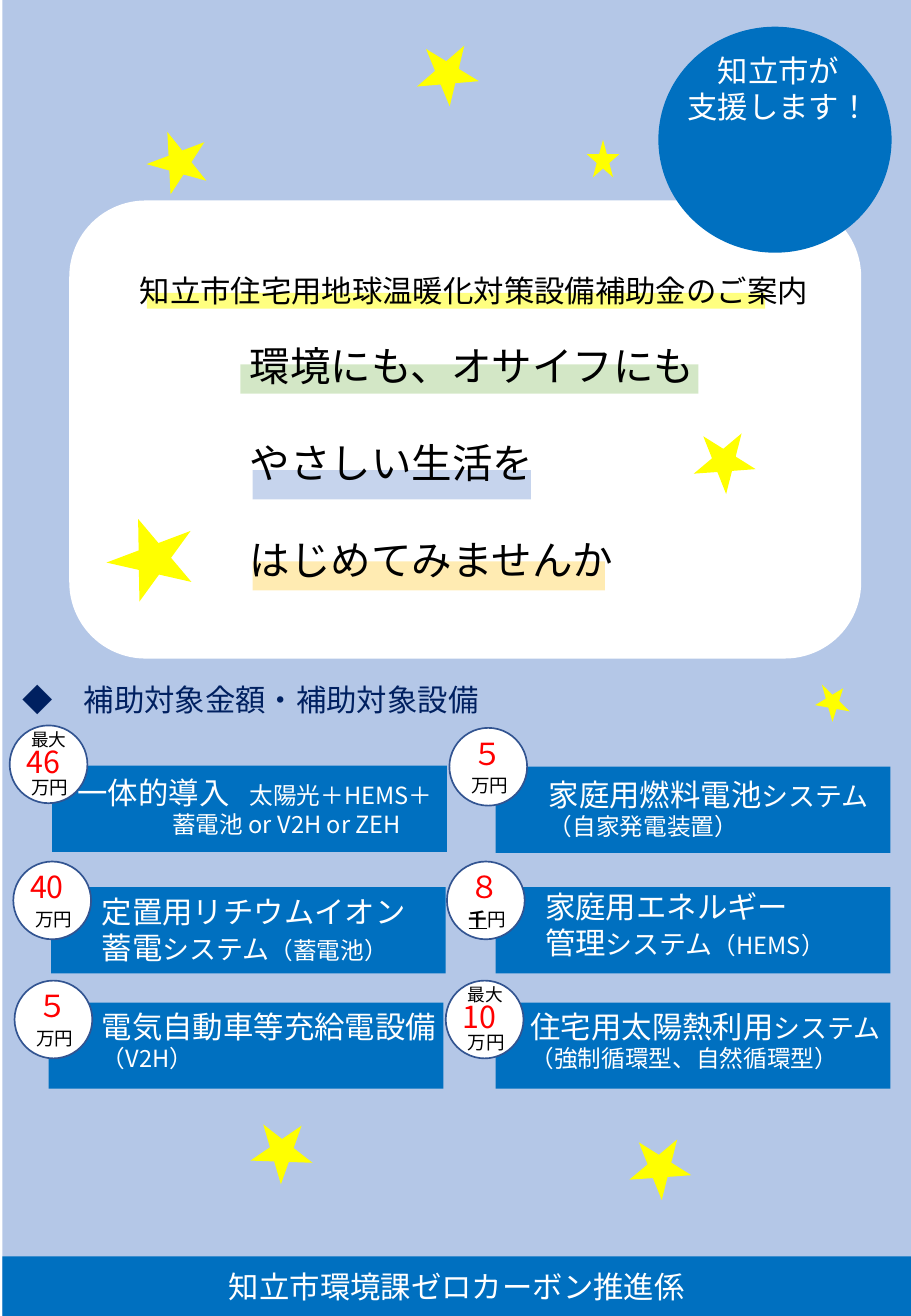
from collections import namedtuple

from lxml import etree
from pptx import Presentation
from pptx.dml.color import RGBColor
from pptx.enum.lang import MSO_LANGUAGE_ID as Language
from pptx.enum.shapes import MSO_SHAPE as Shape
from pptx.enum.text import MSO_ANCHOR as Anchor, MSO_AUTO_SIZE as AutoSize, PP_ALIGN as Align
from pptx.oxml.ns import qn
from pptx.util import Pt

PX = 9144  # 100 px to the inch
WIDTH, HEIGHT = 750, 1083
GOTHIC = "Noto Sans CJK JP"
LINE_HEIGHT = 1.19
COLORS = {
    "sky": "B4C7E7", "white": "FFFFFF", "black": "000000", "blue": "0070C0",
    "navy": "002060", "outline": "325491", "red": "FF0000", "yellow": "FFFF00",
    "green": "A9D18E", "periwinkle": "8FAADC", "amber": "FFD966",
}
Box = namedtuple("Box", "left top width height")
# text_area is x and y within the bar, and the width
Card = namedtuple("Card", "bar text_area lines indent badge limit amount unit")

STARS = [
    (Box(121, 107, 51, 49), 339.2), (Box(483, 115, 27, 31), 0),
    (Box(344, 34, 51, 49), 31.3), (Box(572, 353, 51, 49), 32.1),
    (Box(88, 425, 74, 64), 339.4), (Box(671, 561, 27, 31), 329),
    (Box(205, 921, 51, 49), 325.7), (Box(519, 934, 51, 49), 32.1),
]
MAN_YEN = [("万円", 11)]
CARDS = [
    Card((43, 630), (11, 2, 365),
         [[("一体的導入", 18), ("　", 12), ("太陽光＋HEMS＋", 14)],
          [("蓄電池 or V2H or ZEH", 14)]],
         78, (8, 597), "最大", "46", MAN_YEN),
    Card((408, 631), (34, 3, 298),
         [[("家庭用燃料電池", 18), ("システム", 16)], [("（自家発電装置）", 14)]],
         0, (370, 599), "", "５", MAN_YEN),
    Card((42, 730), (32, 0, 273),
         [[("定置用リチウムイオン", 18)],
          [("蓄電", 18), ("システム", 16), ("（蓄電池）", 14)]],
         0, (11, 709), "", "40", MAN_YEN),
    Card((408, 730), (31, -4, 262),
         [[("家庭用エネルギー", 18)],
          [("管理", 18), ("システム", 16), ("（HEMS）", 14)]],
         0, (368, 709), "", "８", [("千", 11), ("円", 11)]),
    Card((40, 825), (34, 0, 303),
         [[("電気自動車等充給電設備", 18)], [("（V2H）", 14)]],
         0, (12, 807), "", "５", MAN_YEN),
    Card((408, 825), (19, 0, 323),
         [[("住宅用太陽熱利用", 18), ("システム", 16)],
          [("（強制循環型、自然循環型）", 14)]],
         0, (367, 807), "最大", "10", MAN_YEN),
]


def rgb(name):
    return RGBColor.from_string(COLORS[name])


def emu(box):
    return [length * PX for length in box]


def add_figure(slide, kind, box, color, line=None, alpha=None):
    shape = slide.shapes.add_shape(kind, *emu(box))
    shape.shadow.inherit = False
    shape.fill.solid()
    shape.fill.fore_color.rgb = rgb(color)
    if alpha:
        fill = shape.element.spPr.find(qn("a:solidFill"))
        etree.SubElement(fill[0], qn("a:alpha"), val=str(alpha * 1000))
    if line:
        shape.line.color.rgb = rgb(line)
        shape.line.width = Pt(1)
    else:
        shape.line.fill.background()
    return shape


def write(shape, lines, color, font=GOTHIC, align=Align.LEFT, gap=0, wrap=False, anchor=Anchor.TOP):
    """Fill a shape with paragraphs, each a list of (text, size) runs."""
    frame = shape.text_frame
    frame.word_wrap = wrap
    frame.auto_size = AutoSize.NONE if wrap else AutoSize.SHAPE_TO_FIT_TEXT
    frame.vertical_anchor = anchor
    for index, line in enumerate(lines):
        paragraph = frame.add_paragraph() if index else frame.paragraphs[0]
        paragraph.alignment = align
        paragraph.space_before = Pt(gap if index else 0)
        paragraph.line_spacing = Pt(max(size for _, size in line) * LINE_HEIGHT)
        for text, size in line:
            run = paragraph.add_run()
            run.text = text
            run.font.size = Pt(size)
            run.font.color.rgb = rgb(color)
            run.font.name = font
            run.font.language_id = Language.JAPANESE
            latin = run.font._element.find(qn("a:latin"))
            latin.addnext(latin.makeelement(qn("a:ea"), {"typeface": GOTHIC}))
    return frame


def add_label(slide, box, lines, color, **style):
    return write(slide.shapes.add_textbox(*emu(box)), lines, color, **style)


def add_message_panel(slide, box):
    """White panel with the title and three highlighted headline lines."""
    left, top = box.left, box.top
    add_figure(slide, Shape.ROUNDED_RECTANGLE, box, "white")
    marker = add_figure(slide, Shape.RECTANGLE, Box(left + 64, top + 76, 509, 13), "yellow", alpha=50)
    title = slide.shapes.title
    marker.element.addnext(title.element)
    title.left, title.top, title.width, title.height = emu(Box(left + 48, top + 54, 576, 40))
    write(title, [[("知立市住宅用地球温暖化対策設備補助金のご案内", 18)]], "black")
    highlights = [(141, 135, 377, "green"), (151, 222, 229, "periwinkle"), (151, 297, 290, "amber")]
    for x, y, width, color in highlights:
        add_figure(slide, Shape.RECTANGLE, Box(left + x, top + y, width, 24), color, alpha=50)
    headline = ["環境にも、オサイフにも", "やさしい生活を", "はじめてみませんか"]
    add_label(slide, Box(left + 139, top + 111, 390, 212),
              [[(text, 24)] for text in headline], "black", gap=29)


def add_support_circle(slide, box):
    add_figure(slide, Shape.OVAL, box, "blue")
    add_label(slide, Box(box.left + 13, box.top + 16, 172, 71),
              [[("知立市が", 18)], [("支援します！", 18)]],
              "white", font="Calibri", align=Align.CENTER)


def add_badge(slide, box, card):
    """Round badge with the amount, its unit and an upper-limit label if any."""
    left, top = box.left, box.top
    add_figure(slide, Shape.OVAL, box, "white", line="outline")
    drop = 4 if card.limit else 0
    unit = add_label(slide, Box(left + 8, top + 33 + drop, 51, 29), [card.unit], "black")
    if len(card.unit) > 1:
        thousand = unit.paragraphs[0].runs[0]
        thousand.font.bold = True
        thousand.font.underline = True
    x, width = (9, 45) if len(card.amount) == 1 else (4, 58)
    y = 10 if card.limit else 1
    add_label(slide, Box(left + x, top + y, width, 40), [[(card.amount, 18)]], "red")
    if card.limit:
        add_label(slide, Box(left + 8, top - 2, 51, 29), [[(card.limit, 10.5)]], "black")


def add_card(slide, box, card):
    add_figure(slide, Shape.RECTANGLE, box, "blue")
    x, y, width = card.text_area
    frame = add_label(slide, Box(box.left + x, box.top + y, width, 64), card.lines, "white")
    if card.indent:
        properties = frame.paragraphs[-1]._p.get_or_add_pPr()
        properties.set("marL", str(card.indent * PX))
    add_badge(slide, Box(*card.badge, 64, 64), card)


def add_footer(slide, box):
    bar = add_figure(slide, Shape.RECTANGLE, box, "blue")
    write(bar, [[("知立市環境課ゼロカーボン推進係", 18)]], "white", font="Calibri",
          align=Align.CENTER, wrap=True, anchor=Anchor.MIDDLE)


def main():
    presentation = Presentation()
    presentation.slide_width, presentation.slide_height = WIDTH * PX, HEIGHT * PX
    slide = presentation.slides.add_slide(presentation.slide_layouts[5])
    add_figure(slide, Shape.RECTANGLE, Box(2, 0, WIDTH - 2, HEIGHT), "sky")
    add_message_panel(slide, Box(57, 165, 652, 377))
    add_support_circle(slide, Box(542, 22, 192, 186))
    add_footer(slide, Box(2, 1034, WIDTH - 2, 49))
    for box, angle in STARS:
        add_figure(slide, Shape.STAR_5_POINT, box, "yellow").rotation = angle
    add_label(slide, Box(9, 556, 399, 40), [[("◆　補助対象金額・補助対象設備", 18)]], "navy")
    for card in CARDS:
        add_card(slide, Box(*card.bar, 325, 71), card)
    presentation.save("out.pptx")


if __name__ == "__main__":
    main()
